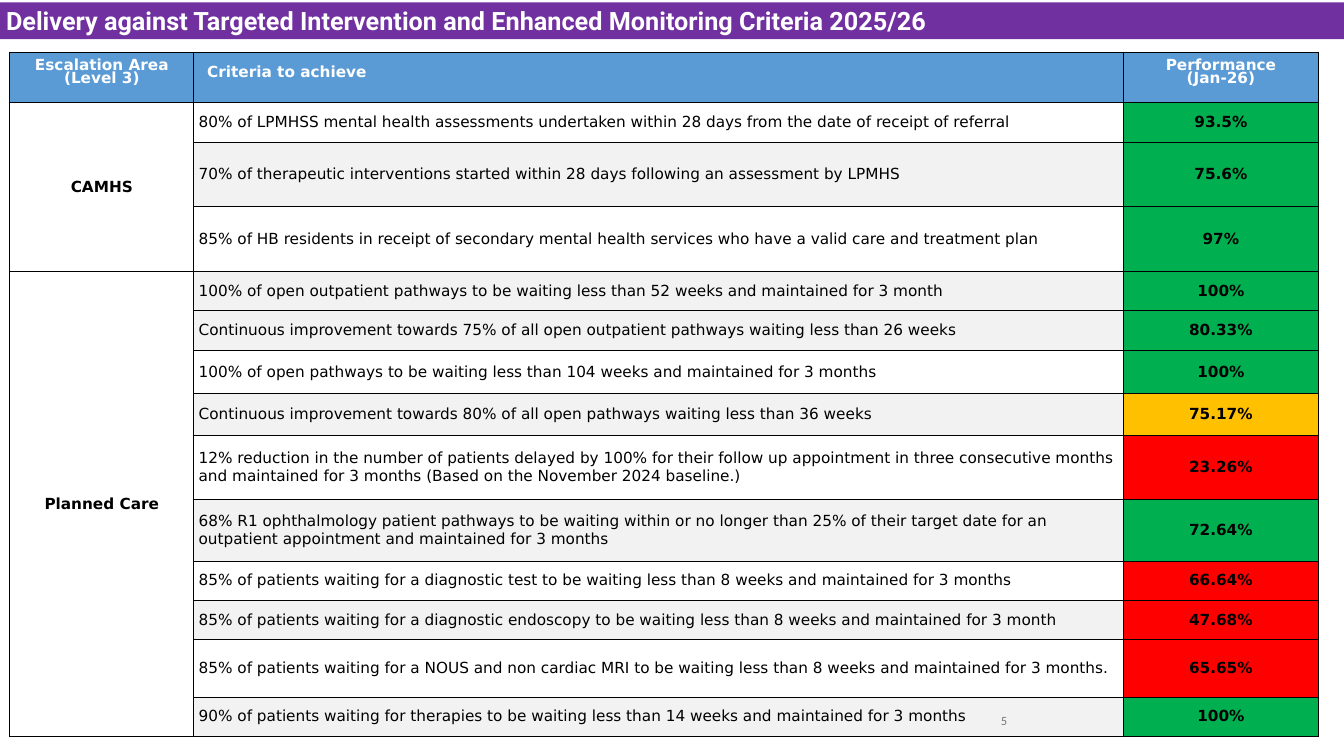
from lxml.etree import SubElement
from pptx import Presentation
from pptx.dml.color import RGBColor
from pptx.enum.shapes import MSO_SHAPE
from pptx.enum.text import MSO_ANCHOR, MSO_AUTO_SIZE, PP_ALIGN
from pptx.oxml.ns import qn
from pptx.util import Inches, Pt

WIDTH, HEIGHT = 21.99, 12.37
WHITE, BLACK, GREY, BLUE = "FFFFFF", "000000", "F2F2F2", "5B9BD5"
GREEN, AMBER, RED = "00B050", "FFC000", "FF0000"
COLUMNS = [13.69, 69.14, 14.57]
HEAD_ROW = 6.71
HEADS = [["Escalation Area", "(Level 3)"], ["Criteria to achieve"],
         ["Performance", "(Jan-26)"]]
AREAS = [("CAMHS", 1, 3), ("Planned Care", 4, 13)]
GOALS = [
    (5.2, "80% of LPMHSS mental health assessments undertaken within 28 days from the date of receipt of referral", "93.5%", GREEN),
    (8.57, "70% of therapeutic interventions started within 28 days following an assessment by LPMHS", "75.6%", GREEN),
    (8.57, "85% of HB residents in receipt of secondary mental health services who have a valid care and treatment plan", "97%", GREEN),
    (5.2, "100% of open outpatient pathways to be waiting less than 52 weeks and maintained for 3 month", "100%", GREEN),
    (5.2, "Continuous improvement towards 75% of all open outpatient pathways waiting less than 26 weeks", "80.33%", GREEN),
    (5.74, "100% of open pathways to be waiting less than 104 weeks and maintained for 3 months", "100%", GREEN),
    (5.5, "Continuous improvement towards 80% of all open pathways waiting less than 36 weeks", "75.17%", AMBER),
    (8.57, "12% reduction in the number of patients delayed by 100% for their follow up appointment in three consecutive months and maintained for 3 months (Based on the November 2024 baseline.)", "23.26%", RED),
    (8.08, "68% R1 ophthalmology patient pathways to be waiting within or no longer than 25% of their target date for an outpatient appointment and maintained for 3 months", "72.64%", GREEN),
    (5.2, "85% of patients waiting for a diagnostic test to be waiting less than 8 weeks and maintained for 3 months", "66.64%", RED),
    (5.2, "85% of patients waiting for a diagnostic endoscopy to be waiting less than 8 weeks and maintained for 3 month", "47.68%", RED),
    (7.6, "85% of patients waiting for a NOUS and non cardiac MRI to be waiting less than 8 weeks and maintained for 3 months.", "65.65%", RED),
    (5.2, "90% of patients waiting for therapies to be waiting less than 14 weeks and maintained for 3 months", "100%", GREEN),
]


def wide(share):
    return Inches(WIDTH * share / 100)


def tall(share):
    return Inches(HEIGHT * share / 100)


def place(left, top, width, height):
    return wide(left), tall(top), wide(width), tall(height)


def tint(code):
    return RGBColor.from_string(code)


def write(para, text, size, face, color, bold=False, align=PP_ALIGN.LEFT):
    para.alignment = align
    run = para.add_run()
    run.text = text
    run.font.size = Pt(size)
    run.font.name = face
    run.font.bold = bold
    run.font.color.rgb = tint(color)


def edge(cell):
    props = cell._tc.get_or_add_tcPr()
    for spot, side in enumerate(("lnL", "lnR", "lnT", "lnB")):
        line = SubElement(props, qn("a:" + side), w=str(Pt(1)))
        fill = SubElement(line, qn("a:solidFill"))
        SubElement(fill, qn("a:srgbClr"), val=BLACK)
        props.insert(spot, line)


def style(cell, fill=None, side=0.36, rise=0.65):
    cell.vertical_anchor = MSO_ANCHOR.MIDDLE
    cell.margin_left = cell.margin_right = wide(side)
    cell.margin_top = cell.margin_bottom = tall(rise)
    if fill:
        cell.fill.solid()
        cell.fill.fore_color.rgb = tint(fill)
    else:
        cell.fill.background()
    edge(cell)


def label(cell, text, bold=True, align=PP_ALIGN.CENTER):
    write(cell.text_frame.paragraphs[0], text, 18, "DejaVu Sans", BLACK, bold, align)


def head(cell, lines, align):
    style(cell, BLUE, 1, 0.89)
    frame = cell.text_frame
    for spot, text in enumerate(lines):
        para = frame.add_paragraph() if spot else frame.paragraphs[0]
        para.line_spacing = Pt(8)
        if spot:
            para.space_before = Pt(8)
        write(para, text, 18, "DejaVu Sans", WHITE, True, align)


def chart_goals(slide):
    rows = [HEAD_ROW] + [goal[0] for goal in GOALS]
    box = place(0.73, 6.87, sum(COLUMNS), sum(rows))
    table = slide.shapes.add_table(len(rows), len(COLUMNS), *box).table
    table.first_row = table.horz_banding = False
    for column, share in zip(table.columns, COLUMNS):
        column.width = wide(share)
    for row, share in zip(table.rows, rows):
        row.height = tall(share)
    for spot, lines in enumerate(HEADS):
        head(table.cell(0, spot), lines, PP_ALIGN.LEFT if spot == 1 else PP_ALIGN.CENTER)
    for spot, (_, goal, score, color) in enumerate(GOALS, 1):
        area, aim, mark = (table.cell(spot, col) for col in range(3))
        shade = (spot % 2 == 1) == (spot > 4)
        style(area)
        style(aim, GREY if shade else None)
        style(mark, color)
        label(aim, goal, False, PP_ALIGN.LEFT)
        label(mark, score)
    for name, first, last in AREAS:
        table.cell(first, 0).merge(table.cell(last, 0))
        label(table.cell(first, 0), name)


def number(slide, text):
    frame = slide.shapes.add_textbox(*place(57.39, 92.64, 18.28, 5.34)).text_frame
    frame.word_wrap = True
    frame.vertical_anchor = MSO_ANCHOR.MIDDLE
    frame.margin_left = frame.margin_right = wide(0.73)
    frame.margin_top = frame.margin_bottom = tall(0.65)
    write(frame.paragraphs[0], text, 14.8, "Calibri", "797979", align=PP_ALIGN.RIGHT)


def banner(slide, text):
    bar = slide.shapes.add_shape(MSO_SHAPE.RECTANGLE, *place(0, 0.32, 100, 4.85))
    bar.shadow.inherit = False
    bar.fill.solid()
    bar.fill.fore_color.rgb = tint("7030A0")
    bar.line.fill.background()
    frame = bar.text_frame
    frame.word_wrap = True
    frame.auto_size = MSO_AUTO_SIZE.SHAPE_TO_FIT_TEXT
    frame.vertical_anchor = MSO_ANCHOR.TOP
    para = frame.paragraphs[0]
    para.space_after = Pt(9.9)
    write(para, text, 29.7, "Roboto", WHITE, True, PP_ALIGN.JUSTIFY)


def main():
    deck = Presentation()
    deck.slide_width, deck.slide_height = Inches(WIDTH), Inches(HEIGHT)
    slide = deck.slides.add_slide(deck.slide_layouts[6])
    chart_goals(slide)
    number(slide, "5")
    banner(slide, "Delivery against Targeted Intervention and Enhanced Monitoring Criteria 2025/26")
    deck.save("out.pptx")


if __name__ == "__main__":
    main()
